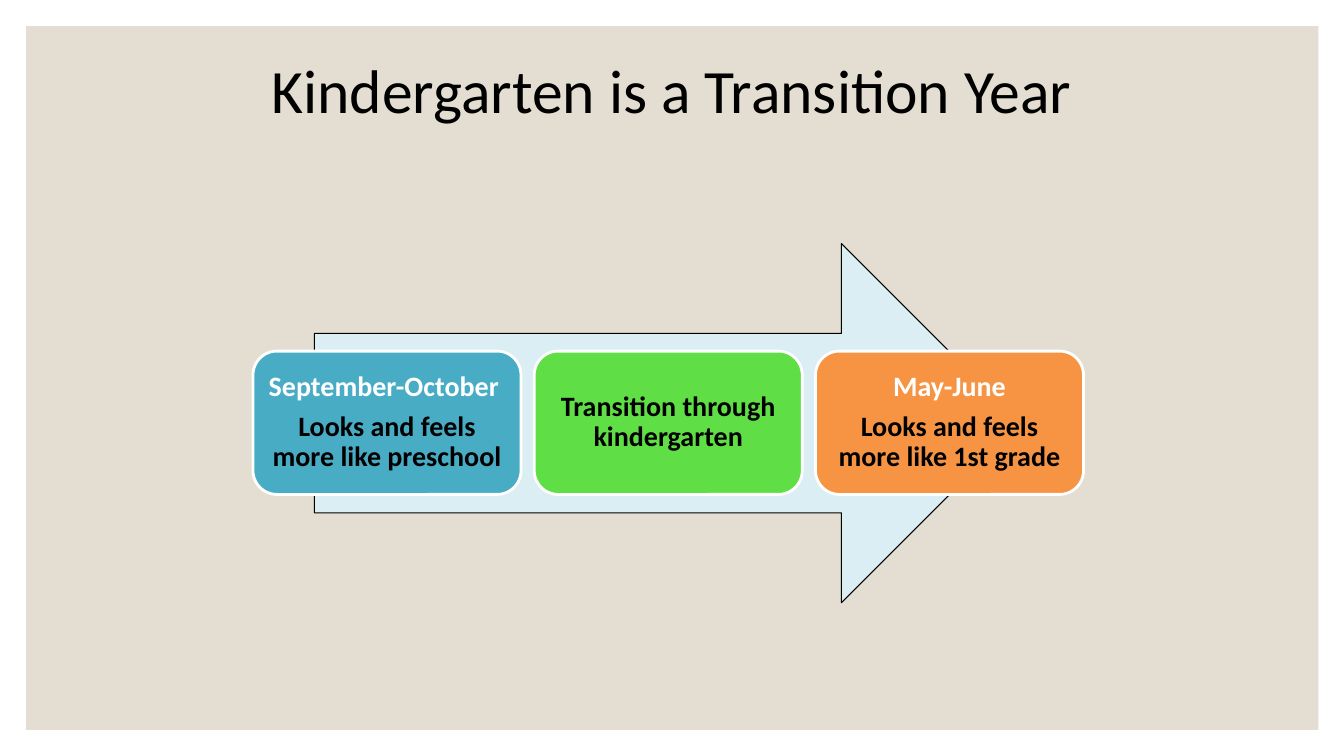
from pptx import Presentation
from pptx import util as u
from pptx.dml.color import RGBColor
from pptx.enum import shapes, text

Kind = shapes.MSO_SHAPE


def paint(target, color):
    target.solid()
    target.fore_color.rgb = RGBColor.from_string(color)


def write(par, words, size=20, color="000000", bold=False, before=0, after=0):
    par.alignment = text.PP_ALIGN.CENTER
    par.line_spacing = 0.9
    par.space_before = u.Pt(before)
    par.space_after = u.Pt(after)
    run = par.add_run()
    run.text = words
    run.font.name = "Calibri"
    run.font.size = u.Pt(size)
    run.font.bold = bold
    paint(run.font.fill, color)


class Deck:
    black = "000000"
    white = "FFFFFF"
    panel = "E3DED1"
    pale = "DAEEF3"

    def __init__(self):
        self.file = Presentation()
        self.file.slide_width = u.Pt(960)
        self.file.slide_height = u.Pt(540)
        self.slide = self.file.slides.add_slide(self.file.slide_layouts[5])
        paint(self.slide.background.fill, self.white)

    def shape(self, kind, place, fill, line=None, width=0):
        item = self.slide.shapes.add_shape(kind, *map(u.Pt, place))
        item.shadow.inherit = False
        paint(item.fill, fill)
        if line:
            paint(item.line.fill, line)
            item.line.width = u.Pt(width)
        else:
            item.line.fill.background()
        return item

    def frame(self, item, side, edge):
        body = item.text_frame
        body.word_wrap = True
        body.auto_size = text.MSO_AUTO_SIZE.NONE
        body.vertical_anchor = text.MSO_ANCHOR.MIDDLE
        body.margin_left = body.margin_right = u.Pt(side)
        body.margin_top = body.margin_bottom = u.Pt(edge)
        return body

    def title(self, words, place):
        item = self.slide.shapes.title
        item.left, item.top, item.width, item.height = map(u.Pt, place)
        write(self.frame(item, 7.2, 3.6).paragraphs[0], words, size=44)

    def back(self, place):
        item = self.shape(Kind.RECTANGLE, place, self.panel)
        self.slide.shapes.title.element.addprevious(item.element)

    def arrow(self, place):
        item = self.shape(Kind.RIGHT_ARROW, place, self.pale, self.black, 0.75)
        item.adjustments[0] = item.adjustments[1] = 0.5

    def card(self, place, fill, head, note):
        item = self.shape(Kind.ROUNDED_RECTANGLE, place, fill, self.white, 2)
        item.adjustments[0] = 0.167
        body = self.frame(item, 6, 6)
        par = body.paragraphs[0]
        if head:
            write(par, head, color=self.white, bold=True)
            par = body.add_paragraph()
        write(par, note, bold=True, before=7 if head else 0, after=7)


def main():
    deck = Deck()
    deck.title("Kindergarten is a Transition Year", (156, 21.6, 648, 90))
    deck.back((18.7, 18.7, 923, 502.6))
    deck.arrow((224.6, 174, 504.7, 256.5))
    cards = [
        ("49ACC5", "September-October ", "Looks and feels more like preschool"),
        ("5FDF45", None, "Transition through kindergarten"),
        ("F69444", "May-June", "Looks and feels more like 1st grade"),
    ]
    for step, card in enumerate(cards):
        deck.card((180.7 + 200.9 * step, 250.8, 191.5, 102.4), *card)
    deck.file.save("out.pptx")


if __name__ == "__main__":
    main()
